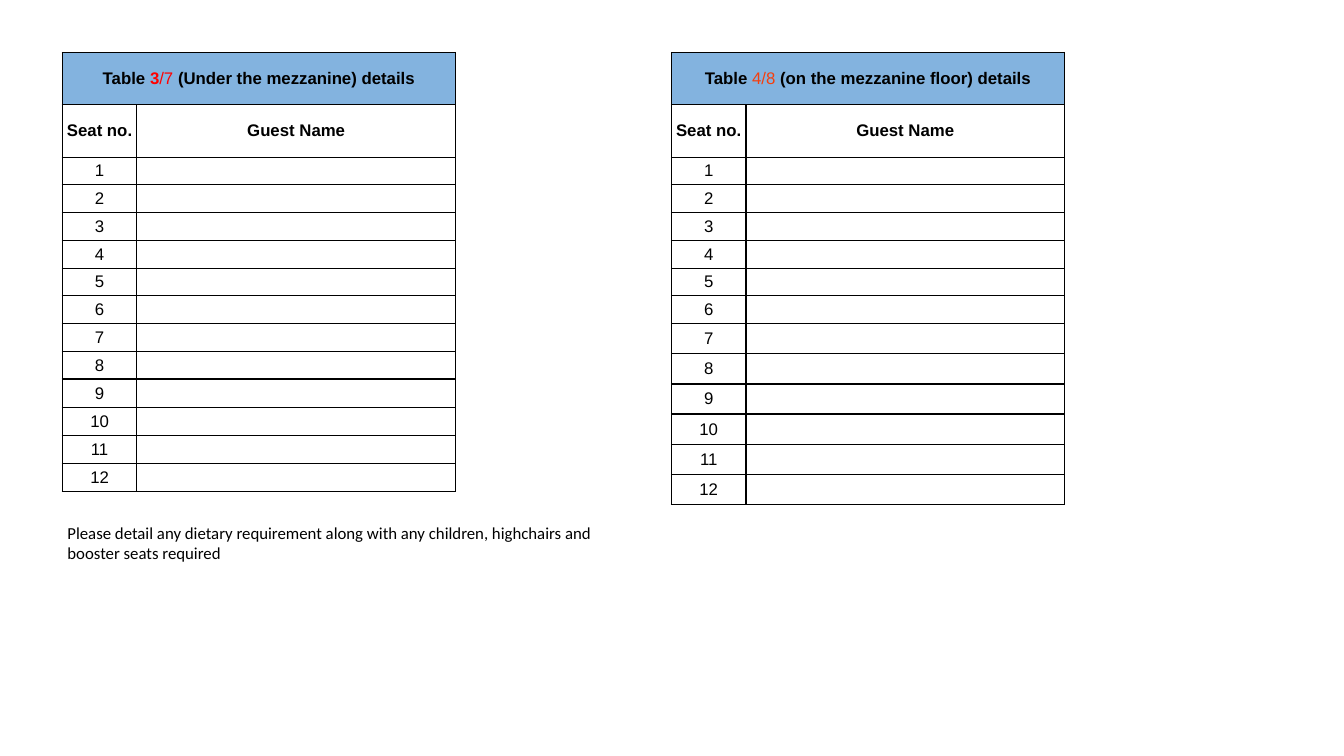
"""Build a slide with two seating tables and a note for guests."""
from pptx import Presentation
from pptx import util as u
from pptx.dml.color import RGBColor
from pptx.enum import shapes, text
from pptx.oxml.ns import qn
from lxml import etree

BLACK = RGBColor(0x00, 0x00, 0x00)
WHITE = RGBColor(0xFF, 0xFF, 0xFF)
BLUE = RGBColor(0x83, 0xB3, 0xDF)
RED = RGBColor(0xFF, 0x00, 0x00)
ORANGE = RGBColor(0xF5, 0x3F, 0x0E)

SEATS = 12
HEADINGS = ["Seat no.", "Guest Name"]
NOTE = ("Please detail any dietary requirement along with any children, "
        "highchairs and booster seats required")
SEATING_TABLES = [
    {
        "left": 1.57,
        "title": [("Table ", BLACK, True), ("3", RED, True), ("/7 ", RED, False),
                  ("(Under the mezzanine) details", BLACK, True)],
        "seat_heights": [0.7] * 8 + [0.71] * 4,
    },
    {
        "left": 16.92,
        "title": [("Table ", BLACK, True), ("4/8 ", ORANGE, False),
                  ("(on the mezzanine floor) details", BLACK, True)],
        "seat_heights": [0.7] * 6 + [0.76] * 6,
    },
]

TABLE_TOP = 1.32
HEADER_HEIGHT = 1.32
COLUMN_WIDTHS = [1.88, 8.03]
TEXT_SIZE = u.Pt(12)


def add_run(paragraph, words, font_name, color=BLACK, bold=False):
    run = paragraph.add_run()
    run.text = words
    run.font.name = font_name
    run.font.size = TEXT_SIZE
    run.font.bold = bold
    run.font.color.rgb = color


def add_borders(cell):
    properties = cell._tc.get_or_add_tcPr()
    for side in ("a:lnL", "a:lnR", "a:lnT", "a:lnB"):
        line = etree.SubElement(properties, qn(side), w=str(u.Pt(1)))
        fill = etree.SubElement(line, qn("a:solidFill"))
        etree.SubElement(fill, qn("a:srgbClr"), val=str(BLACK))


def fill_cell(cell, runs, color=None):
    add_borders(cell)
    cell.margin_left = cell.margin_right = cell.margin_top = cell.margin_bottom = 0
    cell.vertical_anchor = text.MSO_ANCHOR.MIDDLE
    if color is None:
        cell.fill.background()
    else:
        cell.fill.solid()
        cell.fill.fore_color.rgb = color
    paragraph = cell.text_frame.paragraphs[0]
    paragraph.alignment = text.PP_ALIGN.CENTER
    for words, run_color, bold in runs:
        add_run(paragraph, words, "Arial", run_color, bold)
    if not runs:
        etree.SubElement(paragraph._p, qn("a:endParaRPr"), sz=str(int(TEXT_SIZE.pt * 100)))


def add_seating_table(slide, seating):
    heights = [HEADER_HEIGHT] * 2 + seating["seat_heights"]
    rows = [[seating["title"], []], [[(heading, BLACK, True)] for heading in HEADINGS]]
    rows += [[[(str(seat), BLACK, False)], []] for seat in range(1, SEATS + 1)]
    frame = slide.shapes.add_table(
        len(rows), len(COLUMN_WIDTHS), u.Cm(seating["left"]), u.Cm(TABLE_TOP),
        u.Cm(sum(COLUMN_WIDTHS)), u.Cm(sum(heights)))
    table = frame.table
    table.first_row = table.horz_banding = False
    for column, width in zip(table.columns, COLUMN_WIDTHS):
        column.width = u.Cm(width)
    for row, height, contents in zip(table.rows, heights, rows):
        row.height = u.Cm(height)
        for cell, runs in zip(row.cells, contents):
            fill_cell(cell, runs, BLUE if contents is rows[0] else None)
    table.cell(0, 0).merge(table.cell(0, 1))


def add_note(slide):
    shape = slide.shapes.add_shape(
        shapes.MSO_SHAPE.RECTANGLE, u.Cm(1.57), u.Cm(13.03), u.Cm(13.84), u.Cm(1.27))
    shape.shadow.inherit = False
    shape.fill.solid()
    shape.fill.fore_color.rgb = WHITE
    shape.line.fill.background()
    frame = shape.text_frame
    frame.word_wrap = True
    frame.auto_size = text.MSO_AUTO_SIZE.SHAPE_TO_FIT_TEXT
    frame.vertical_anchor = text.MSO_ANCHOR.TOP
    frame.margin_left = frame.margin_right = u.Cm(0.13)
    frame.margin_top = frame.margin_bottom = u.Cm(0.13)
    paragraph = frame.paragraphs[0]
    paragraph.alignment = text.PP_ALIGN.LEFT
    add_run(paragraph, NOTE, "Calibri")


def main():
    presentation = Presentation()
    presentation.slide_width = u.Cm(33.87)
    presentation.slide_height = u.Cm(19.05)
    slide = presentation.slides.add_slide(presentation.slide_layouts[6])
    for seating in SEATING_TABLES:
        add_seating_table(slide, seating)
    add_note(slide)
    presentation.save("out.pptx")


if __name__ == "__main__":
    main()
